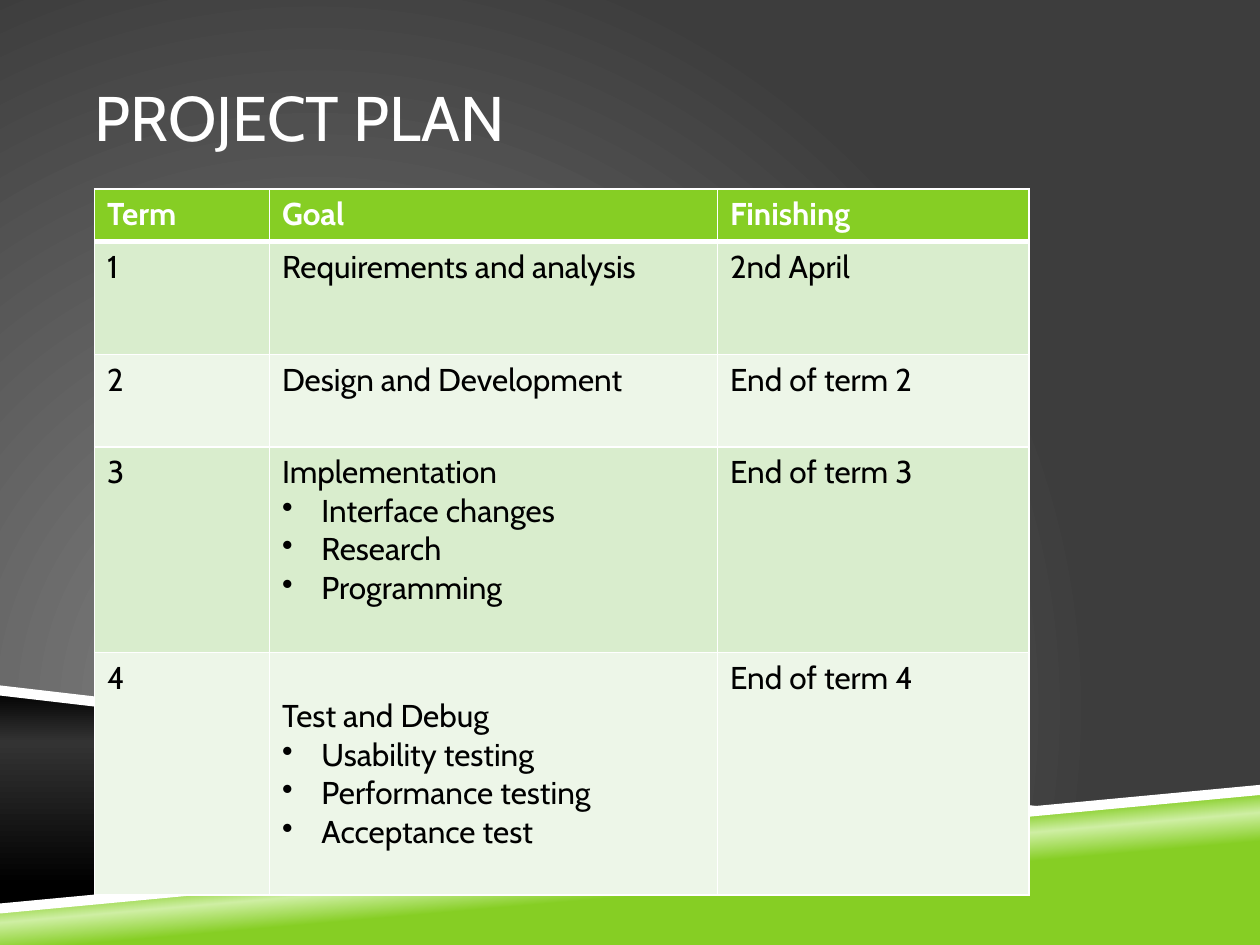
from lxml import etree
from pptx import Presentation
from pptx.dml.color import RGBColor
from pptx.enum.text import MSO_ANCHOR, PP_ALIGN
from pptx.oxml import parse_xml
from pptx.oxml.ns import nsdecls, qn
from pptx.util import Pt

MIDDLE = MSO_ANCHOR.MIDDLE
LEFT = PP_ALIGN.LEFT
TITLE_ONLY = 5

FONT = "Cabin"
WHITE, BLACK = "FFFFFF", "000000"
GREEN, PALE_GREEN = "86CE24", "CFEFA4"
BANDS = ("D9EDCD", "EDF6E8")

SLIDE_SIZE = (720, 540)
COLUMN_WIDTHS = (100, 256, 178)
ROW_HEIGHTS = (30, 64.5, 53, 117.5, 138.5)
LINE_HEIGHT = 21.9
CELL_MARGIN = 3.6
BULLET_INDENT = 22.5

PLAN = [
    ("Term", ["Goal"], "Finishing"),
    ("1", ["Requirements and analysis"], "2nd April"),
    ("2", ["Design and Development"], "End of term 2"),
    ("3", ["Implementation", "Interface changes", "Research", "Programming"],
     "End of term 3"),
    ("4", ["Test and Debug", "Usability testing", "Performance testing",
           "Acceptance test"], "End of term 4"),
]

RADIAL = ('<a:path path="circle"><a:fillToRect l="50000" t="100000" '
          'r="100000" b="50000"/></a:path>')

WEDGES = [
    ([(0, 394.5), (586, 463), (0, 518.5)],
     [(0, BLACK), (24, "333333"), (90, BLACK)], 90),
    ([(0, 519), (720, 451.5), (720, 540), (0, 540)],
     [(39, GREEN), (50, PALE_GREEN), (58, GREEN)], 265),
]
STRIPES = [
    [(0, 391.7), (0, 397.5), (574.5, 464.5), (604, 462)],
    [(720, 448.5), (0, 516.3), (0, 522), (720, 454.3)],
]


def color(hex_value):
    return RGBColor.from_string(hex_value)


def apply(target, values):
    for name, value in values.items():
        setattr(target, name, value)


def style_font(font, size, hex_value, bold=False):
    apply(font, {"name": FONT, "size": Pt(size), "bold": bold})
    font.color.rgb = color(hex_value)


def set_gradient(fill, owner, stops, direction):
    fill.gradient()
    default = next(owner.iter(qn("a:gradFill")))
    stop_xml = "".join(
        f'<a:gs pos="{position * 1000}"><a:srgbClr val="{value}"/></a:gs>'
        for position, value in stops)
    gradient = parse_xml(
        f'<a:gradFill {nsdecls("a")} rotWithShape="1">'
        f"<a:gsLst>{stop_xml}</a:gsLst>{direction}</a:gradFill>")
    default.getparent().replace(default, gradient)


def add_outline(slide, points):
    start, *rest = points
    builder = slide.shapes.build_freeform(
        round(start[0] * 100), round(start[1] * 100), scale=Pt(1) / 100)
    builder.add_line_segments(
        [(round(x * 100), round(y * 100)) for x, y in rest], close=True)
    outline = builder.convert_to_shape()
    outline.shadow.inherit = False
    outline.line.fill.background()
    return outline


def add_wedge(slide, points, stops, angle):
    wedge = add_outline(slide, points)
    direction = f'<a:lin ang="{angle * 60000}" scaled="0"/>'
    set_gradient(wedge.fill, wedge._element, stops, direction)


def add_stripe(slide, points):
    stripe = add_outline(slide, points)
    stripe.fill.solid()
    stripe.fill.fore_color.rgb = color(WHITE)


def set_title(slide, text):
    title = slide.shapes.title
    apply(title, {"left": Pt(54), "top": Pt(21.6),
                  "width": Pt(612), "height": Pt(90)})
    frame = title.text_frame
    apply(frame, {"text": text, "vertical_anchor": MIDDLE, "word_wrap": True,
                  "margin_left": 0, "margin_right": 0})
    heading = frame.paragraphs[0]
    heading.alignment = LEFT
    style_font(heading.font, 36, WHITE)


def set_borders(cell, widths):
    properties = cell._tc.get_or_add_tcPr()
    for side, width in widths.items():
        border = etree.SubElement(properties, qn(f"a:ln{side}"), w=str(Pt(width)))
        solid = etree.SubElement(border, qn("a:solidFill"))
        etree.SubElement(solid, qn("a:srgbClr"), val=WHITE)


def add_bullet(paragraph):
    properties = paragraph._p.get_or_add_pPr()
    properties.set("marL", str(Pt(BULLET_INDENT)))
    properties.set("indent", str(-Pt(BULLET_INDENT)))
    etree.SubElement(properties, qn("a:buChar"), char="•")


def fill_cell(cell, lines, row):
    header = row == 0
    set_borders(cell, {"L": 1, "R": 1, "T": 3 if row == 1 else 1,
                       "B": 3 if header else 1})
    cell.fill.solid()
    cell.fill.fore_color.rgb = color(GREEN if header else BANDS[(row - 1) % 2])
    cell.text_frame.text = "\n".join(lines)
    for index, paragraph in enumerate(cell.text_frame.paragraphs):
        if index:
            add_bullet(paragraph)
        style_font(paragraph.font, 18, WHITE if header else BLACK, header)


def add_plan(slide):
    plan = slide.shapes.add_table(
        len(PLAN), len(COLUMN_WIDTHS), Pt(54), Pt(108),
        Pt(sum(COLUMN_WIDTHS)), Pt(sum(ROW_HEIGHTS))).table
    for column, width in zip(plan.columns, COLUMN_WIDTHS):
        column.width = Pt(width)
    for row, (term, goal, finishing) in enumerate(PLAN):
        plan.rows[row].height = Pt(ROW_HEIGHTS[row])
        for column, lines in enumerate(([term], goal, [finishing])):
            fill_cell(plan.cell(row, column), lines, row)
    plan.cell(len(PLAN) - 1, 1).margin_top = Pt(CELL_MARGIN + LINE_HEIGHT)


def main():
    deck = Presentation()
    deck.slide_width, deck.slide_height = map(Pt, SLIDE_SIZE)
    slide = deck.slides.add_slide(deck.slide_layouts[TITLE_ONLY])
    set_gradient(slide.background.fill, slide._element,
                 [(0, "878787"), (100, "3D3D3D")], RADIAL)
    for points, stops, angle in WEDGES:
        add_wedge(slide, points, stops, angle)
    for points in STRIPES:
        add_stripe(slide, points)
    set_title(slide, "PROJECT PLAN")
    add_plan(slide)
    deck.save("out.pptx")


if __name__ == "__main__":
    main()
